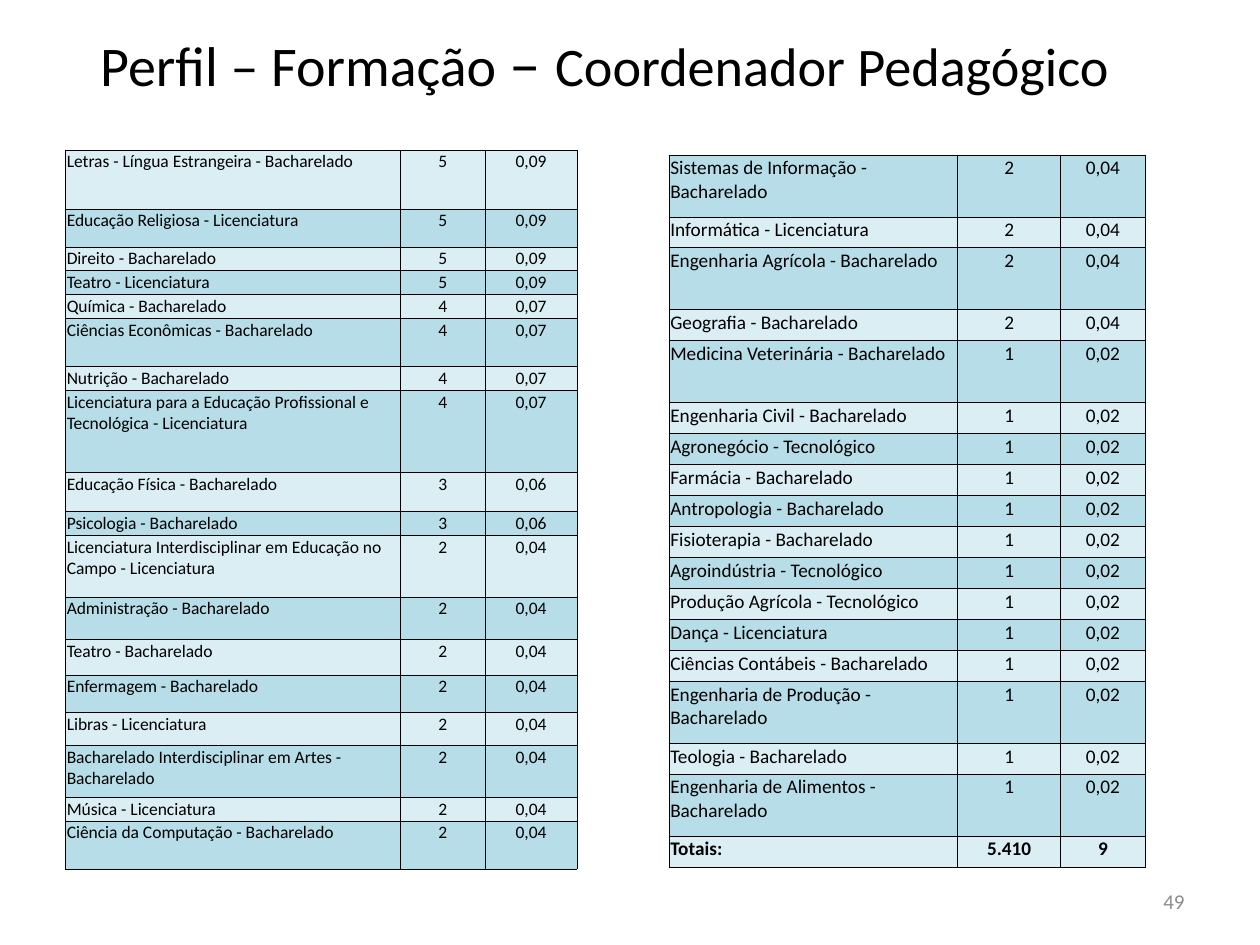
from lxml import etree
from pptx import Presentation
from pptx.dml.color import RGBColor
from pptx.enum.text import MSO_ANCHOR, PP_ALIGN
from pptx.oxml.ns import qn
from pptx.util import Inches, Pt

LEFT, CENTER, RIGHT = PP_ALIGN.LEFT, PP_ALIGN.CENTER, PP_ALIGN.RIGHT
MIDDLE = MSO_ANCHOR.MIDDLE
FONT = "Calibri"
COLORS = {"ink": "000000", "light": "DAEEF3", "deep": "B7DEE8", "number": "8C8C8C"}
TOTAL = 5410

deck = Presentation()
deck.slide_width, deck.slide_height = Inches(10), Inches(7.5)
page = deck.slides.add_slide(deck.slide_layouts[6])
UNIT = deck.slide_width / 1000


def add_text(para, text, size, color="ink", bold=False):
    span = para.add_run()
    span.text = text
    span.font.name, span.font.size, span.font.bold = FONT, Pt(size), bold
    span.font.color.rgb = RGBColor.from_string(COLORS[color])


def add_line(place, align, spans, color):
    box = page.shapes.add_textbox(*[round(n * UNIT) for n in place])
    box.text_frame.word_wrap = True
    box.text_frame.vertical_anchor = MIDDLE
    para = box.text_frame.paragraphs[0]
    para.alignment = align
    for text, size in spans:
        add_text(para, text, size, color)


add_line((50, 13, 859, 71), CENTER,
         [("Perfil – Formação ", 32), ("– ", 36), ("Coordenador Pedagógico", 31)], "ink")

LEFT_ROWS = [
    ("Letras - Língua Estrangeira - Bacharelado", 5, 47),
    ("Educação Religiosa - Licenciatura", 5, 30),
    ("Direito - Bacharelado", 5, 19),
    ("Teatro - Licenciatura", 5, 19),
    ("Química - Bacharelado", 4, 19),
    ("Ciências Econômicas - Bacharelado", 4, 38),
    ("Nutrição - Bacharelado", 4, 19),
    ("Licenciatura para a Educação Profissional e Tecnológica - Licenciatura", 4, 65),
    ("Educação Física - Bacharelado", 3, 31),
    ("Psicologia - Bacharelado", 3, 19),
    ("Licenciatura Interdisciplinar em Educação no Campo - Licenciatura", 2, 49),
    ("Administração - Bacharelado", 2, 34),
    ("Teatro - Bacharelado", 2, 28),
    ("Enfermagem - Bacharelado", 2, 30),
    ("Libras - Licenciatura", 2, 26),
    ("Bacharelado Interdisciplinar em Artes - Bacharelado", 2, 41),
    ("Música - Licenciatura", 2, 19),
    ("Ciência da Computação - Bacharelado", 2, 38),
]
SINGLE, DOUBLE = 24.6, 49.2
RIGHT_ROWS = [
    ("Sistemas de Informação - Bacharelado", 2, DOUBLE),
    ("Informática - Licenciatura", 2, SINGLE),
    ("Engenharia Agrícola - Bacharelado", 2, DOUBLE),
    ("Geografia - Bacharelado", 2, SINGLE),
    ("Medicina Veterinária - Bacharelado", 1, DOUBLE),
    ("Engenharia Civil - Bacharelado", 1, SINGLE),
    ("Agronegócio - Tecnológico", 1, SINGLE),
    ("Farmácia - Bacharelado", 1, SINGLE),
    ("Antropologia - Bacharelado", 1, SINGLE),
    ("Fisioterapia - Bacharelado", 1, SINGLE),
    ("Agroindústria - Tecnológico", 1, SINGLE),
    ("Produção Agrícola - Tecnológico", 1, SINGLE),
    ("Dança - Licenciatura", 1, SINGLE),
    ("Ciências Contábeis - Bacharelado", 1, SINGLE),
    ("Engenharia de Produção - Bacharelado", 1, DOUBLE),
    ("Teologia - Bacharelado", 1, SINGLE),
    ("Engenharia de Alimentos - Bacharelado", 1, DOUBLE),
    ("Totais:", TOTAL, SINGLE),
]
TABLES = [
    (52, 119, (266, 67, 73), 10, ("light", "deep"), LEFT_ROWS),
    (531, 123, (229, 82, 67), 11, ("deep", "light"), RIGHT_ROWS),
]

for left, top, widths, size, bands, rows in TABLES:
    place = (left, top, sum(widths), sum(row[2] for row in rows))
    table = page.shapes.add_table(
        len(rows), len(widths), *[round(n * UNIT) for n in place]).table
    for column, width in zip(table.columns, widths):
        column.width = round(width * UNIT)
    for index, (course, count, height) in enumerate(rows):
        table.rows[index].height = round(height * UNIT)
        is_total = count == TOTAL
        percent = f"{100 * count / TOTAL:.2f}".replace(".", ",")
        values = (course, "5.410", "9") if is_total else (course, str(count), percent)
        for place_in_row, value in enumerate(values):
            cell = table.cell(index, place_in_row)
            cell.margin_left = cell.margin_right = cell.margin_top = Inches(0.01)
            cell.margin_bottom = 0
            props = cell._tc.get_or_add_tcPr()
            for side in ("a:lnL", "a:lnR", "a:lnT", "a:lnB"):
                border = etree.SubElement(props, qn(side), w=str(Pt(0.5)))
                paint = etree.SubElement(border, qn("a:solidFill"))
                etree.SubElement(paint, qn("a:srgbClr"), val=COLORS["ink"])
            cell.fill.solid()
            cell.fill.fore_color.rgb = RGBColor.from_string(COLORS[bands[index % 2]])
            para = cell.text_frame.paragraphs[0]
            para.alignment = CENTER if place_in_row else LEFT
            add_text(para, value, size, bold=is_total)

add_line((717, 695, 233, 40), RIGHT, [("49", 12)], "number")

deck.save("out.pptx")
